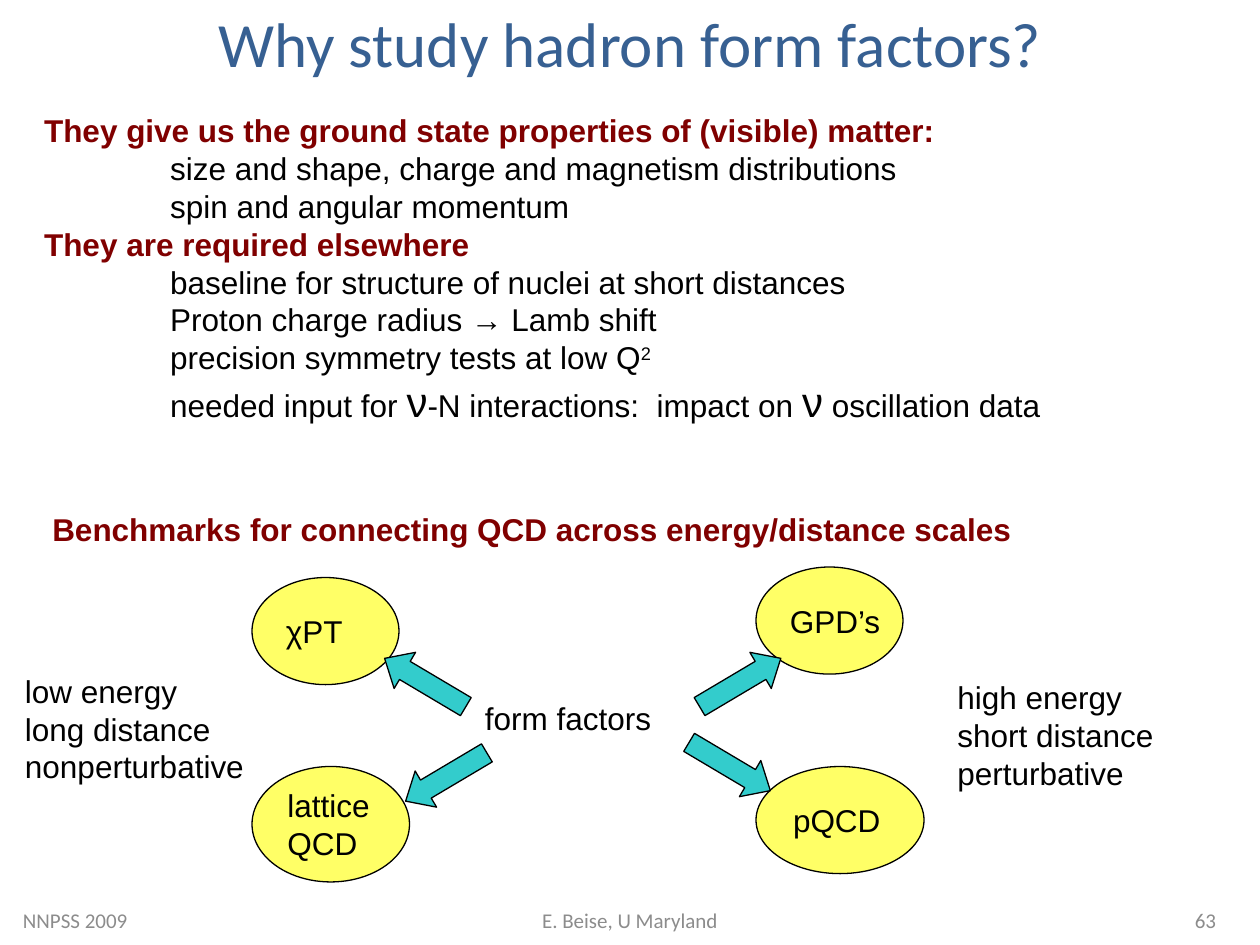
import pptx
import pptx.util
import pptx.dml.color
import pptx.enum.shapes
import pptx.enum.text
import pptx.oxml.ns
import lxml.etree

RGBColor = pptx.dml.color.RGBColor
ALIGN = pptx.enum.text.PP_ALIGN
ANCHOR = pptx.enum.text.MSO_ANCHOR
SHAPE = pptx.enum.shapes.MSO_SHAPE

BLACK = RGBColor(0x00, 0x00, 0x00)
BLUE = RGBColor(0x37, 0x60, 0x92)
MAROON = RGBColor(0x80, 0x00, 0x00)
YELLOW = RGBColor(0xFF, 0xFF, 0x66)
TEAL = RGBColor(0x33, 0xCC, 0xCC)
GREY = RGBColor(0x8C, 0x8C, 0x8C)

COLUMNS, ROWS = 120, 90
CELL = pptx.util.Inches(10) // COLUMNS

TITLE = {"name": "Calibri", "size": pptx.util.Pt(36), "color": BLUE}
PLAIN = {"name": "Arial", "size": pptx.util.Pt(18), "color": BLACK, "bold": False}
HEADING = {**PLAIN, "color": MAROON, "bold": True}
GREEK = {**PLAIN, "size": pptx.util.Pt(24)}
FOOTER = {"name": "Calibri", "size": pptx.util.Pt(12), "color": GREY}

REASONS = [
    (HEADING, ["They give us the ground state properties of (visible) matter:"]),
    (PLAIN, ["size and shape, charge and magnetism distributions"]),
    (PLAIN, ["spin and angular momentum"]),
    (HEADING, ["They are required elsewhere"]),
    (PLAIN, ["baseline for structure of nuclei at short distances"]),
    (PLAIN, ["Proton charge radius → Lamb shift"]),
    (PLAIN, ["precision symmetry tests at low Q", "2"]),
    (PLAIN, ["needed input for ", "ν", "-N interactions:  impact on ", "ν", " oscillation data"]),
]
THEORIES = [
    (24, 1, 14, 10.2, ["χPT"]),
    (24, 19, 15, 11, ["lattice", "QCD"]),
    (72, 19, 16, 10.2, ["pQCD"]),
    (72, 0, 14, 10.2, ["GPD’s"]),
]
ARROWS = [(66, 9, -30.7), (65, 17, 30.7), (36, 9, 210.7), (38, 18, 149.3)]
SCALES = [
    (1.2, 9.4, 23.3, 12, False, ["low energy", "long distance", "nonperturbative"]),
    (45, 12, 21, 5.2, True, ["form factors"]),
    (90, 10, 21.1, 12, False, ["high energy", "short distance", "perturbative"]),
]


def within(box, column, row, width, height):
    return box[0] + column, box[1] + row, width, height


def emu(box):
    return [round(length * CELL) for length in box]


def move(part, box):
    for side, length in zip(("left", "top", "width", "height"), emu(box)):
        setattr(part, side, length)


def style(font, look):
    for attribute, value in look.items():
        if attribute == "color":
            font.color.rgb = value
        else:
            setattr(font, attribute, value)


def write(frame, lines, look, **settings):
    align = settings.pop("align", ALIGN.LEFT)
    for attribute, value in settings.items():
        setattr(frame, attribute, value)
    for index, line in enumerate(lines):
        paragraph = frame.add_paragraph() if index else frame.paragraphs[0]
        paragraph.alignment = align
        run = paragraph.add_run()
        run.text = line
        style(run.font, look)


def add_label(slide, box, lines, look, **settings):
    label = slide.shapes.add_textbox(*emu(box))
    write(label.text_frame, lines, look, **settings)


def add_outlined(slide, kind, box, fill):
    outlined = slide.shapes.add_shape(kind, *emu(box))
    outlined.shadow.inherit = False
    outlined.fill.solid()
    outlined.fill.fore_color.rgb = fill
    outlined.line.color.rgb = BLACK
    outlined.line.width = pptx.util.Pt(0.75)
    return outlined


def add_title(slide, box):
    title = slide.shapes.title
    move(title, box)
    write(title.text_frame, ["Why study hadron form factors?"], TITLE,
          align=ALIGN.CENTER, vertical_anchor=ANCHOR.MIDDLE,
          auto_size=pptx.enum.text.MSO_AUTO_SIZE.NONE)


def add_reasons(slide, box):
    body = slide.placeholders[1]
    move(body, box)
    frame = body.text_frame
    frame.auto_size = pptx.enum.text.MSO_AUTO_SIZE.NONE
    for index, (look, pieces) in enumerate(REASONS):
        paragraph = frame.add_paragraph() if index else frame.paragraphs[0]
        paragraph.space_before = pptx.util.Pt(0)
        properties = paragraph._p.get_or_add_pPr()
        properties.set("marL", str(0 if look is HEADING else 12 * CELL))
        properties.set("indent", "0")
        lxml.etree.SubElement(properties, pptx.oxml.ns.qn("a:buNone"))
        for piece in pieces:
            run = paragraph.add_run()
            run.text = piece
            style(run.font, GREEK if piece == "ν" else look)
            if piece == "2":
                run._r.get_or_add_rPr().set("baseline", "30000")


def add_energy_diagram(slide, box):
    for *spot, lines in THEORIES:
        theory = add_outlined(slide, SHAPE.OVAL, within(box, *spot), YELLOW)
        write(theory.text_frame, lines, PLAIN, word_wrap=False,
              vertical_anchor=ANCHOR.MIDDLE)
    for column, row, angle in ARROWS:
        arrow = add_outlined(slide, SHAPE.RIGHT_ARROW, within(box, column, row, 9, 4), TEAL)
        arrow.adjustments[1] = 0.56
        arrow.rotation = angle
    for *spot, wrap, lines in SCALES:
        add_label(slide, within(box, *spot), lines, PLAIN, word_wrap=wrap)


def add_footer(slide, box):
    for column, width, align, words in (
        (1, 28, ALIGN.LEFT, "NNPSS 2009"),
        (41, 38, ALIGN.CENTER, "E. Beise, U Maryland"),
        (89, 28, ALIGN.RIGHT, "63"),
    ):
        add_label(slide, within(box, column, 0, width, box[3]), [words], FOOTER,
                  align=align, word_wrap=True, vertical_anchor=ANCHOR.MIDDLE)


def main():
    deck = pptx.Presentation()
    deck.slide_width = COLUMNS * CELL
    deck.slide_height = ROWS * CELL
    slide = deck.slides.add_slide(deck.slide_layouts[1])
    add_title(slide, (9, 0, 102, 8))
    add_reasons(slide, (3, 10, 115, 34))
    add_label(slide, (3.8, 48, 104, 5.2),
              ["Benchmarks for connecting QCD across energy/distance scales"],
              HEADING, word_wrap=False)
    add_energy_diagram(slide, (0, 54, COLUMNS, 30))
    add_footer(slide, (0, 85.2, COLUMNS, 4.8))
    deck.save("out.pptx")


if __name__ == "__main__":
    main()
